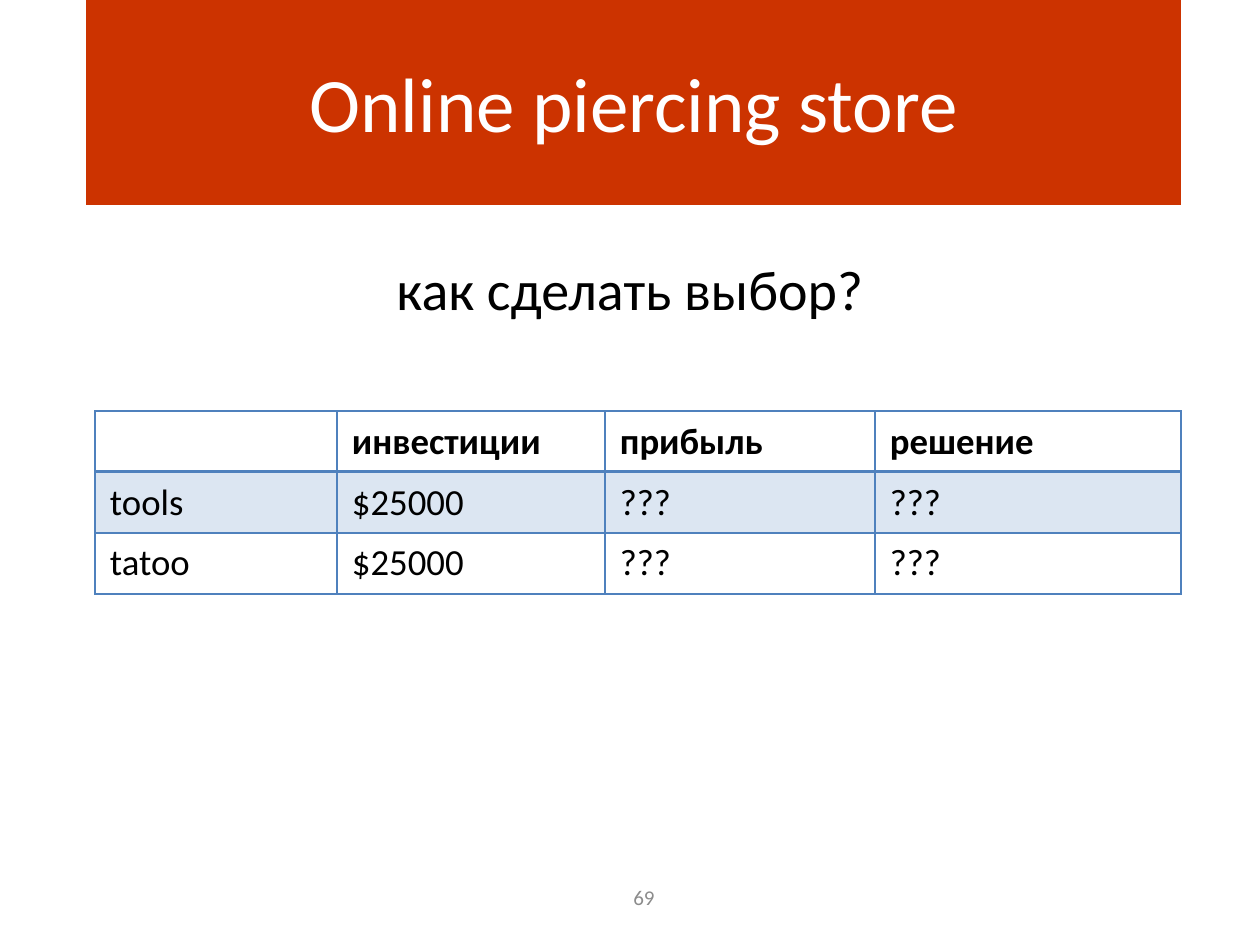
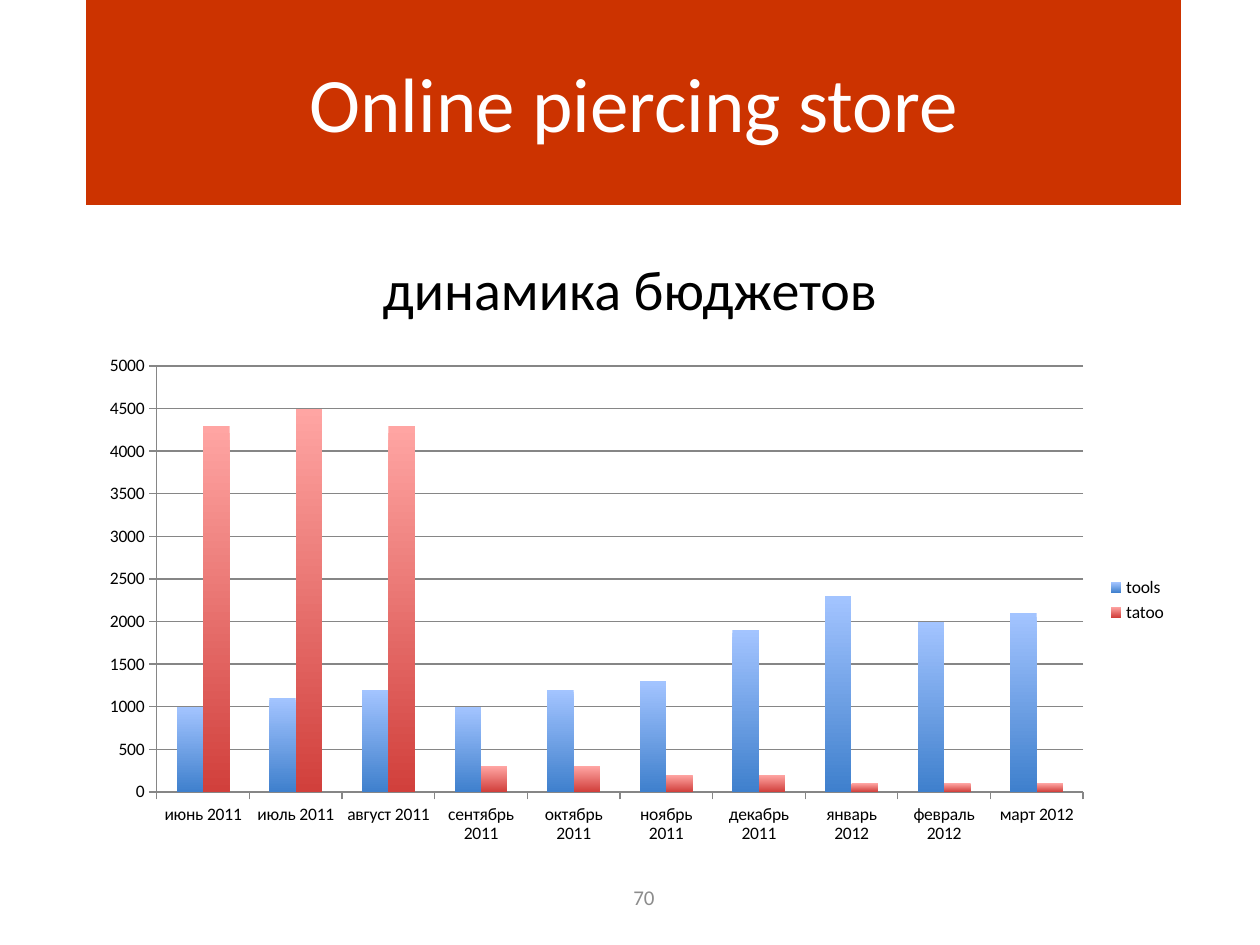
from lxml import etree
from pptx import Presentation
from pptx import util as u
from pptx.chart.data import CategoryChartData
from pptx.dml.color import RGBColor
from pptx.enum import chart as ch, shapes, text
from pptx.oxml import ns

PX = u.Inches(1) // 126
FACE = "Calibri"
HEX = {
    "band": "CC3300", "white": "FFFFFF", "ink": "000000", "number": "8C8C8C",
    "edge": "4F81BD", "stripe": "DCE6F2", "grid": "868686",
}
FADES = [("A3C4FF", "3F80CD"), ("FFA5A3", "D1403C")]  # top and bottom of bars

HEAD = "Online piercing store"
ROWS = [
    ["", "инвестиции", "прибыль", "решение"],
    ["tools", "$25000", "???", "???"],
    ["tatoo", "$25000", "???", "???"],
]
COLS = [242, 268, 270, 306]
MONTHS = [
    "июнь 2011", "июль 2011", "август 2011", "сентябрь 2011", "октябрь 2011",
    "ноябрь 2011", "декабрь 2011", "январь 2012", "февраль 2012", "март 2012",
]
SPEND = {
    "tools": [1000, 1100, 1200, 1000, 1200, 1300, 1900, 2300, 2000, 2100],
    "tatoo": [4300, 4500, 4300, 300, 300, 200, 200, 100, 100, 100],
}


def rgb(name):
    return RGBColor.from_string(HEX.get(name, name))


def box(*sides):
    return [side * PX for side in sides]


def style(font, size, color="ink", bold=False):
    form = {"name": FACE, "size": u.Pt(size), "bold": bold}
    for key, value in form.items():
        setattr(font, key, value)
    font.color.rgb = rgb(color)


def write(shape, words, size, color="ink", middle=True):
    """Put one centred line of text in a shape."""
    frame = shape.text_frame
    anchor = text.MSO_ANCHOR.MIDDLE if middle else text.MSO_ANCHOR.TOP
    form = {"word_wrap": True, "vertical_anchor": anchor,
            "auto_size": text.MSO_AUTO_SIZE.NONE}
    for key, value in form.items():
        setattr(frame, key, value)
    para = frame.paragraphs[0]
    para.text = words
    para.alignment = text.PP_ALIGN.CENTER
    style(para.runs[0].font, size, color)
    return para


def place(shape, *sides):
    for key, value in zip(("left", "top", "width", "height"), box(*sides)):
        setattr(shape, key, value)


def page(deck, lead, number):
    """Add a slide with the band, title, lead line and page number."""
    slide = deck.slides.add_slide(deck.slide_layouts[1])
    title, body = slide.shapes.title, slide.placeholders[1]

    # Band, set behind the title
    band = slide.shapes.add_shape(
        shapes.MSO_SHAPE.RECTANGLE, *box(86, 0, 1095, 205))
    band.shadow.inherit = False
    band.fill.solid()
    band.fill.fore_color.rgb = rgb("band")
    band.line.fill.background()
    title.element.addprevious(band.element)

    # Title and lead line
    place(title, 88, 23, 1092, 157)
    write(title, HEAD, 44, "white")
    place(body, 63, 248, 1134, 552)
    props = write(body, lead, 32, middle=False)._p.get_or_add_pPr()
    props.set("marL", "0")
    props.set("indent", "0")
    etree.SubElement(props, ns.qn("a:buNone"))

    # Page number
    label = slide.shapes.add_textbox(*box(610, 872, 68, 50))
    write(label, str(number), 12, "number")
    return slide


def edge(cell, under):
    """Draw the four borders of a cell; under is the lower width."""
    props = cell._tc.get_or_add_tcPr()
    widths = {"L": 1, "R": 1, "T": 1, "B": under}
    for spot, (side, width) in enumerate(widths.items()):
        line = etree.Element(ns.qn("a:ln" + side), w=str(u.Pt(width)))
        fill = etree.SubElement(line, ns.qn("a:solidFill"))
        etree.SubElement(fill, ns.qn("a:srgbClr"), val=HEX["edge"])
        props.insert(spot, line)


def fill_cell(cell, words, row):
    margins = {"margin_left": 15, "margin_right": 15,
               "margin_top": 8, "margin_bottom": 8}
    for key, value in margins.items():
        setattr(cell, key, value * PX)
    para = cell.text_frame.paragraphs[0]
    para.text = words
    style(para.font, 21, bold=row == 0)
    for run in para.runs:
        style(run.font, 21, bold=row == 0)
    if row == 1:
        cell.fill.solid()
        cell.fill.fore_color.rgb = rgb("stripe")
    else:
        cell.fill.background()
    edge(cell, 2 if row == 0 else 1)


def add_grid(slide):
    high = 59
    frame = slide.shapes.add_table(
        len(ROWS), len(COLS), *box(95, 411, sum(COLS), high * len(ROWS)))
    table = frame.table
    table.first_row = table.horz_banding = False
    for col, wide in zip(table.columns, COLS):
        col.width = wide * PX
    for row, line in enumerate(ROWS):
        table.rows[row].height = high * PX
        for col, words in enumerate(line):
            fill_cell(table.cell(row, col), words, row)


def add_bars(slide):
    data = CategoryChartData()
    data.categories = MONTHS
    for name, values in SPEND.items():
        data.add_series(name, values)
    chart = slide.shapes.add_chart(
        ch.XL_CHART_TYPE.COLUMN_CLUSTERED, *box(88, 346, 1092, 508), data).chart
    style(chart.font, 10)
    chart.has_title = False
    chart.has_legend = True
    chart.legend.position = ch.XL_LEGEND_POSITION.RIGHT
    chart.legend.include_in_layout = False

    # Axes
    scale = {"minimum_scale": 0, "maximum_scale": 5000, "major_unit": 500,
             "has_major_gridlines": True}
    for key, value in scale.items():
        setattr(chart.value_axis, key, value)
    for axis in (chart.value_axis, chart.category_axis):
        axis.major_tick_mark = ch.XL_TICK_MARK.OUTSIDE
        axis.format.line.color.rgb = rgb("grid")
    chart.value_axis.major_gridlines.format.line.color.rgb = rgb("grid")

    # Bars
    plot = chart.plots[0]
    plot.gap_width, plot.overlap, plot.vary_by_categories = 150, 0, False
    for series, fade in zip(plot.series, FADES):
        fill = series.format.fill
        fill.gradient()
        fill.gradient_angle = 270
        for stop, color in zip(fill.gradient_stops, fade):
            stop.color.rgb = rgb(color)


def main():
    deck = Presentation()
    deck.slide_width, deck.slide_height = box(1260, 945)
    add_grid(page(deck, "как сделать выбор?", 69))
    add_bars(page(deck, "динамика бюджетов", 70))
    deck.save("out.pptx")


if __name__ == "__main__":
    main()
